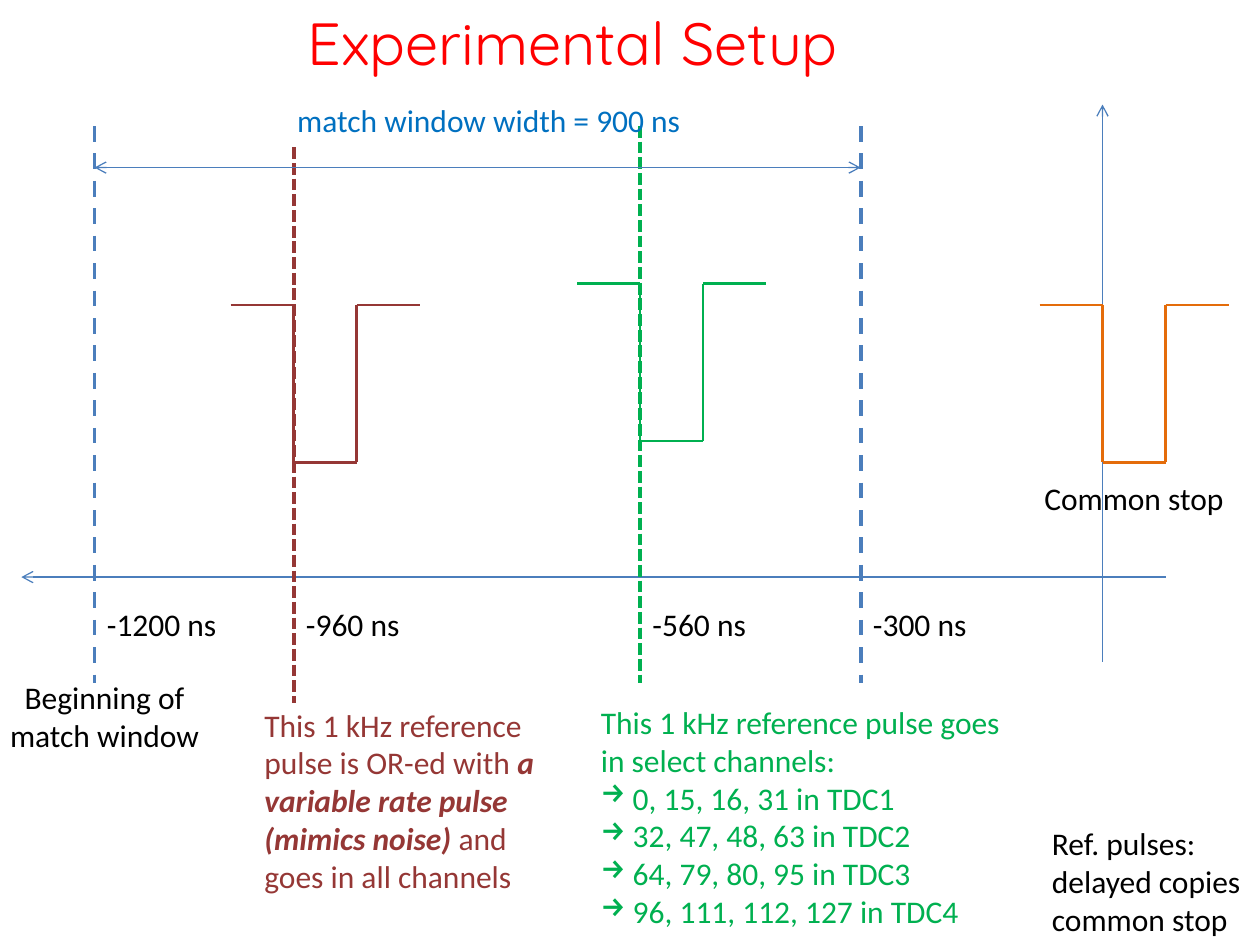
from dataclasses import dataclass
from itertools import pairwise

from lxml import etree
from pptx import Presentation
from pptx import util as u
from pptx.dml.color import RGBColor
from pptx.enum import dml, shapes, text
from pptx.oxml.ns import qn
from pptx.slide import Slide


@dataclass(frozen=True)
class Theme:
    title_font: str = "Quicksand"
    body_font: str = "Calibri"
    title_size: int = 34
    body_size: int = 18
    title: str = "FF0000"
    body: str = "000000"
    axis: str = "4B7EBC"
    window: str = "0070C0"
    noise: str = "953735"
    select: str = "00B050"
    stop: str = "E46C0A"
    thin: float = 0.75
    medium: float = 1.5
    thick: float = 2.25


THEME = Theme()
DASH, DOT = dml.MSO_LINE.DASH, dml.MSO_LINE.ROUND_DOT
SYS_DOT = dml.MSO_LINE.SQUARE_DOT
LEFT, CENTER = text.PP_ALIGN.LEFT, text.PP_ALIGN.CENTER


@dataclass(frozen=True)
class Line:
    start: tuple[float, float]
    end: tuple[float, float]
    color: str = THEME.axis
    width: float = THEME.thin
    dash: dml.MSO_LINE | None = None
    arrows: tuple[str, ...] = ()


@dataclass(frozen=True)
class Pulse:
    left: float
    top: float
    color: str


@dataclass(frozen=True)
class Run:
    words: str
    emphasis: bool = False


@dataclass(frozen=True)
class Label:
    box: tuple[float, float, float, float]
    paragraphs: tuple[tuple[Run, ...], ...]
    color: str = THEME.body
    align: text.PP_ALIGN = LEFT
    wrap: bool = True
    bullets_from: int | None = None


def plain(*lines: str) -> tuple[tuple[Run, ...], ...]:
    return tuple((Run(line),) for line in lines)


def apply(target: object, values: dict[str, object]) -> None:
    for name, value in values.items():
        setattr(target, name, value)


def draw_line(slide: Slide, line: Line) -> None:
    points = [u.Inches(value) for value in (*line.start, *line.end)]
    connector = slide.shapes.add_connector(shapes.MSO_CONNECTOR.STRAIGHT, *points)
    apply(connector.line, {"width": u.Pt(line.width), "dash_style": line.dash})
    connector.line.color.rgb = RGBColor.from_string(line.color)
    outline = connector.line._get_or_add_ln()
    for end in line.arrows:
        etree.SubElement(outline, qn(f"a:{end}"), type="arrow")
    etree.SubElement(connector._element.spPr, qn("a:effectLst"))


def draw_pulse(slide: Slide, pulse: Pulse) -> None:
    """Draw a negative square pulse, each level half an inch long."""
    step, depth = 0.5, 1.25
    levels = [(0, 0), (1, 0), (1, 1), (2, 1), (2, 0), (3, 0)]
    corners = [(pulse.left + x * step, pulse.top + y * depth) for x, y in levels]
    for start, end in pairwise(corners):
        draw_line(slide, Line(start, end, pulse.color, THEME.medium))


def draw_label(slide: Slide, label: Label) -> None:
    box = slide.shapes.add_textbox(*map(u.Inches, label.box))
    frame = box.text_frame
    frame.word_wrap = label.wrap
    for index, runs in enumerate(label.paragraphs):
        paragraph = frame.paragraphs[0] if index == 0 else frame.add_paragraph()
        paragraph.alignment = label.align
        if label.bullets_from is not None and index >= label.bullets_from:
            properties = paragraph._p.get_or_add_pPr()
            etree.SubElement(properties, qn("a:buChar"), char="→")
        for part in runs:
            run = paragraph.add_run()
            run.text = part.words
            apply(run.font, {"name": THEME.body_font, "size": u.Pt(THEME.body_size),
                             "bold": part.emphasis, "italic": part.emphasis})
            run.font.color.rgb = RGBColor.from_string(label.color)


def draw_title(slide: Slide, words: str) -> None:
    title = slide.shapes.title
    apply(title, {"left": u.Inches(2.34), "top": u.Inches(0),
                  "width": u.Inches(4.74), "height": u.Inches(0.67)})
    frame = title.text_frame
    frame.text = words
    apply(frame, {"word_wrap": False, "auto_size": text.MSO_AUTO_SIZE.NONE,
                  "vertical_anchor": text.MSO_ANCHOR.TOP})
    paragraph = frame.paragraphs[0]
    paragraph.alignment = LEFT
    apply(paragraph.runs[0].font, {"name": THEME.title_font, "size": u.Pt(THEME.title_size)})
    paragraph.runs[0].font.color.rgb = RGBColor.from_string(THEME.title)


WINDOW_START, NOISE, SELECT, WINDOW_END, STOP = 0.75, 2.33, 5.08, 6.83, 8.75

LINES = [
    Line((9.25, 4.58), (0.17, 4.58), arrows=("tailEnd",)),
    Line((STOP, 5.25), (STOP, 0.83), arrows=("tailEnd",)),
    Line((SELECT, 1), (SELECT, 5.42), THEME.select, THEME.thick, SYS_DOT),
    Line((NOISE, 1.17), (NOISE, 5.58), THEME.noise, THEME.thick, SYS_DOT),
    *(Line((x, 1), (x, 5.42), width=THEME.thick, dash=DASH)
      for x in (WINDOW_START, WINDOW_END)),
    Line((WINDOW_START, 1.33), (WINDOW_END, 1.33), arrows=("headEnd", "tailEnd")),
]

PULSES = [
    Pulse(SELECT - 0.5, 2.25, THEME.select),
    Pulse(STOP - 0.5, 2.42, THEME.stop),
    Pulse(NOISE - 0.5, 2.42, THEME.noise),
]

TIMES = [(WINDOW_START, 1.08, "-1200 ns"), (NOISE, 0.95, "-960 ns"),
         (SELECT, 0.95, "-560 ns"), (WINDOW_END, 0.95, "-300 ns")]

LABELS = [
    *(Label((x, 4.75, width, 0.4), plain(time), wrap=False) for x, width, time in TIMES),
    Label((-0.17, 5.33, 2, 0.71), plain("Beginning of match window"), align=CENTER),
    Label((1.67, 0.75, 4.42, 0.4), plain("match window width = 900 ns"),
          THEME.window, CENTER),
    Label((4.67, 5.53, 3.42, 2.22),
          plain("This 1 kHz reference pulse goes in select channels:",
                " 0, 15, 16, 31 in TDC1", " 32, 47, 48, 63 in TDC2",
                " 64, 79, 80, 95 in TDC3", " 96, 111, 112, 127 in TDC4"),
          THEME.select, bullets_from=1),
    Label((8, 3.75, 2, 0.4), plain("Common stop"), align=CENTER),
    Label((2, 5.55, 2.5, 1.62),
          ((Run("This 1 kHz reference pulse is OR-ed with "),
            Run("a variable rate pulse (mimics noise) ", emphasis=True),
            Run("and goes in all channels")),), THEME.noise),
    Label((8.25, 6.49, 1.75, 1.01), plain("Ref. pulses: delayed copies common stop")),
]


def main() -> None:
    presentation = Presentation()
    apply(presentation, {"slide_width": u.Inches(10), "slide_height": u.Inches(7.5)})
    slide = presentation.slides.add_slide(presentation.slide_layouts[5])
    draw_title(slide, "Experimental Setup")
    for line in LINES:
        draw_line(slide, line)
    for pulse in PULSES:
        draw_pulse(slide, pulse)
    for label in LABELS:
        draw_label(slide, label)
    presentation.save("out.pptx")


if __name__ == "__main__":
    main()
